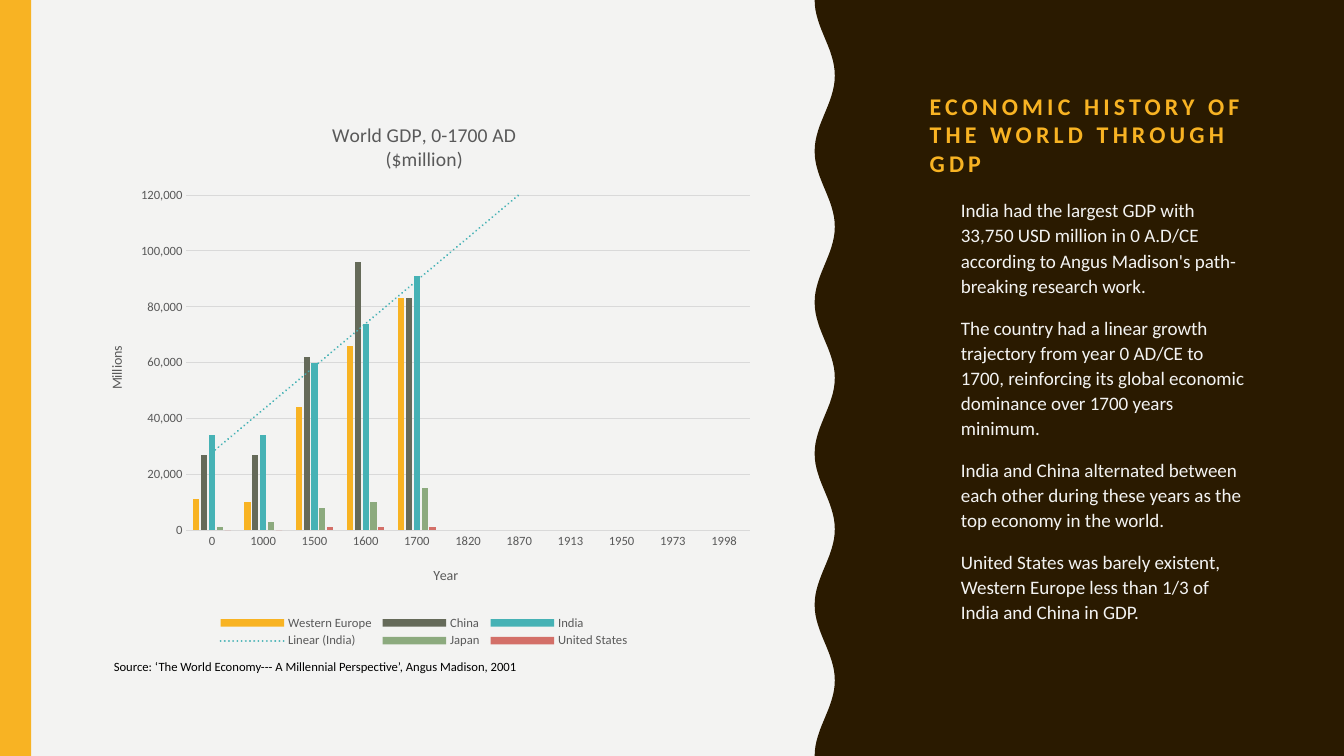
import math

from lxml import etree
from pptx import Presentation
from pptx.chart.data import CategoryChartData
from pptx.dml.color import RGBColor
from pptx.enum.chart import XL_CHART_TYPE, XL_LEGEND_POSITION, XL_TICK_MARK
from pptx.enum.shapes import MSO_SHAPE
from pptx.enum.text import MSO_ANCHOR, MSO_AUTO_SIZE, PP_ALIGN
from pptx.oxml import parse_xml
from pptx.oxml.ns import nsdecls, qn
from pptx.util import Inches, Pt

CLUSTERED = XL_CHART_TYPE.COLUMN_CLUSTERED
LEGEND_BOTTOM = XL_LEGEND_POSITION.BOTTOM
NO_TICK = XL_TICK_MARK.NONE
RECTANGLE = MSO_SHAPE.RECTANGLE
TOP, BOTTOM = MSO_ANCHOR.TOP, MSO_ANCHOR.BOTTOM
NO_AUTOFIT = MSO_AUTO_SIZE.NONE
LEFT = PP_ALIGN.LEFT

FONT = "Calibri"
COLORS = {
    "paper": "F3F3F2",
    "brown": "2A1A00",
    "gold": "F8B323",
    "olive": "656A59",
    "teal": "46B2B5",
    "green": "8CAA7E",
    "red": "D36F68",
    "grey": "595959",
    "grid": "D9D9D9",
    "black": "000000",
}
YEARS = ["0", "1000", "1500", "1600", "1700", "1820", "1870", "1913", "1950", "1973", "1998"]
GDP = [
    ("Western Europe", "gold", [11000, 10000, 44000, 66000, 83000]),
    ("China", "olive", [27000, 27000, 62000, 96000, 83000]),
    ("India", "teal", [34000, 34000, 60000, 74000, 91000]),
    ("Japan", "green", [1000, 3000, 8000, 10000, 15000]),
    ("United States", "red", [0, 0, 1000, 1000, 1000]),
]
FINDINGS = [
    "India had the largest GDP with 33,750 USD million in 0 A.D/CE according to "
    "Angus Madison's path-breaking research work.",
    "The country had a linear growth trajectory from year 0 AD/CE to 1700, "
    "reinforcing its global economic dominance over 1700 years minimum.",
    "India and China alternated between each other during these years as the "
    "top economy in the world.",
    "United States was barely existent, Western Europe less than 1/3 of India "
    "and China in GDP.",
]


def rgb(name):
    return RGBColor.from_string(COLORS[name])


class SlideBuilder:
    def __init__(self, slide):
        self.slide = slide
        slide.background.fill.solid()
        slide.background.fill.fore_color.rgb = rgb("paper")

    def style(self, font, size, color, bold=False):
        font.name = FONT
        font.size = Pt(size)
        font.bold = bold
        font.color.rgb = rgb(color)

    def paint_behind_text(self, shape, color):
        shape.shadow.inherit = False
        shape.fill.solid()
        shape.fill.fore_color.rgb = rgb(color)
        shape.line.fill.background()
        self.slide.shapes.title._element.addprevious(shape._element)

    def bar(self, color, *box):
        shape = self.slide.shapes.add_shape(RECTANGLE, *map(Inches, box))
        self.paint_behind_text(shape, color)

    def wavy_panel(self, color, middle, swing, period, right, height):
        steps = 150
        edge = []
        for step in range(steps + 1):
            y = height * (1 - step / steps)
            x = middle - swing * math.cos(2 * math.pi * y / period)
            edge.append((Inches(x), Inches(y)))
        builder = self.slide.shapes.build_freeform(*edge[-1])
        corners = [(Inches(right), 0), (Inches(right), Inches(height))]
        builder.add_line_segments(corners + edge, close=True)
        self.paint_behind_text(builder.convert_to_shape(), color)

    def move(self, shape, box, anchor):
        shape.left, shape.top, shape.width, shape.height = map(Inches, box)
        frame = shape.text_frame
        frame.word_wrap = True
        frame.auto_size = NO_AUTOFIT
        frame.vertical_anchor = anchor
        return frame

    def title(self, text, *box):
        frame = self.move(self.slide.shapes.title, box, BOTTOM)
        frame.text = text
        paragraph = frame.paragraphs[0]
        paragraph.alignment = LEFT
        self.style(paragraph.font, 17.1, "gold", bold=True)
        paragraph.font._element.set("spc", "300")

    def bullets(self, texts, *box):
        frame = self.move(self.slide.placeholders[1], box, TOP)
        frame.text = "\n".join(texts)
        for paragraph in frame.paragraphs:
            paragraph.line_spacing = 1.1
            paragraph.space_before = Pt(12)
            self.style(paragraph.font, 13.6, "paper")
            properties = paragraph._p.get_or_add_pPr()
            properties.set("marL", str(Inches(0.31)))
            properties.set("indent", str(-Inches(0.31)))
            color = parse_xml(
                f'<a:buClr {nsdecls("a")}><a:srgbClr val="{COLORS["brown"]}"/></a:buClr>')
            mark = parse_xml(f'<a:buChar {nsdecls("a")} char="❖"/>')
            default_font = properties.find(qn("a:defRPr"))
            default_font.addprevious(color)
            default_font.addprevious(mark)

    def caption(self, text, *box):
        shape = self.slide.shapes.add_textbox(*map(Inches, box))
        frame = self.move(shape, box, TOP)
        frame.text = text
        self.style(frame.paragraphs[0].font, 9, "black")

    def place(self, element, index, inner=False, **fractions):
        for old in element.findall(qn("c:layout")):
            element.remove(old)
        layout = parse_xml(f'<c:layout {nsdecls("c")}><c:manualLayout/></c:layout>')
        if inner:
            etree.SubElement(layout[0], qn("c:layoutTarget")).set("val", "inner")
        for axis in "xy":
            etree.SubElement(layout[0], qn(f"c:{axis}Mode")).set("val", "edge")
        for name, value in fractions.items():
            etree.SubElement(layout[0], qn(f"c:{name}")).set("val", str(value))
        element.insert(index, layout)

    def chart_title(self, title, text, size, x, y):
        title.text_frame.text = text
        for paragraph in title.text_frame.paragraphs:
            self.style(paragraph.font, size, "grey")
        self.place(title._element, 1, x=x, y=y)

    def trend_line(self, series, name, color):
        trend = parse_xml(
            f'<c:trendline {nsdecls("c", "a")}><c:name>{name}</c:name>'
            f'<c:spPr><a:ln w="{Pt(1.5)}" cap="rnd"><a:solidFill>'
            f'<a:srgbClr val="{COLORS[color]}"/></a:solidFill>'
            '<a:prstDash val="sysDot"/></a:ln></c:spPr>'
            '<c:trendlineType val="linear"/><c:dispRSqr val="0"/>'
            '<c:dispEq val="0"/></c:trendline>')
        series._element.find(qn("c:cat")).addprevious(trend)

    def gdp_chart(self, *box):
        data = CategoryChartData(number_format="#,##0")
        data.categories = YEARS
        for name, color, values in GDP:
            data.add_series(name, values + [None] * (len(YEARS) - len(values)))
        frame = self.slide.shapes.add_chart(CLUSTERED, *map(Inches, box), data)
        chart = frame.chart
        self.style(chart.font, 10, "black")
        chart.has_title = True
        self.chart_title(chart.chart_title, "World GDP, 0-1700 AD\n($million)", 14, 0.36, 0.03)
        plot = chart.plots[0]
        plot.gap_width = 219
        plot.overlap = -27
        plot.vary_by_categories = False
        for series, (name, color, values) in zip(plot.series, GDP):
            series.format.fill.solid()
            series.format.fill.fore_color.rgb = rgb(color)
            if name == "India":
                self.trend_line(series, "Linear (India)", color)
        years, millions = chart.category_axis, chart.value_axis
        for axis in (years, millions):
            axis.major_tick_mark = axis.minor_tick_mark = NO_TICK
            self.style(axis.tick_labels.font, 9, "grey")
        self.chart_title(years.axis_title, "Year", 10, 0.51, 0.84)
        self.chart_title(millions.axis_title, "Millions", 10, 0.03, 0.44)
        millions.axis_title.text_frame._txBody.bodyPr.set("rot", "-5400000")
        millions.minimum_scale, millions.maximum_scale = 0, 120000
        millions.major_unit = 20000
        millions.tick_labels.number_format = "#,##0"
        millions.tick_labels.number_format_is_linked = False
        millions.format.line.fill.background()
        for line in (years.format.line, millions.major_gridlines.format.line):
            line.color.rgb = rgb("grid")
            line.width = Pt(0.75)
        chart.has_legend = True
        chart.legend.position = LEGEND_BOTTOM
        chart.legend.include_in_layout = False
        self.style(chart.legend.font, 9, "grey")
        self.place(chart.legend._element, 1, x=0.19, y=0.93, w=0.62, h=0.07)
        plot_area = chart._chartSpace.chart.plotArea
        self.place(plot_area, 0, inner=True, x=0.15, y=0.17, w=0.83, h=0.61)


def main():
    presentation = Presentation()
    presentation.slide_width = Inches(13.33)
    presentation.slide_height = Inches(7.5)
    builder = SlideBuilder(presentation.slides.add_slide(presentation.slide_layouts[1]))
    builder.wavy_panel("brown", 8.18, 0.1, 1.5, 13.33, 7.5)
    builder.bar("gold", 0, 0, 0.31, 7.5)
    builder.title("ECONOMIC HISTORY OF THE WORLD THROUGH GDP", 9.12, 0.5, 3.38, 1.31)
    builder.bullets(FINDINGS, 9.12, 1.9, 3.38, 4.55)
    builder.gdp_chart(0.84, 1.01, 6.73, 5.45)
    builder.caption(
        "Source: ‘The World Economy--- A Millennial Perspective’, Angus Madison, 2001",
        1.03, 6.49, 5.78, 0.25)
    presentation.save("out.pptx")


if __name__ == "__main__":
    main()
